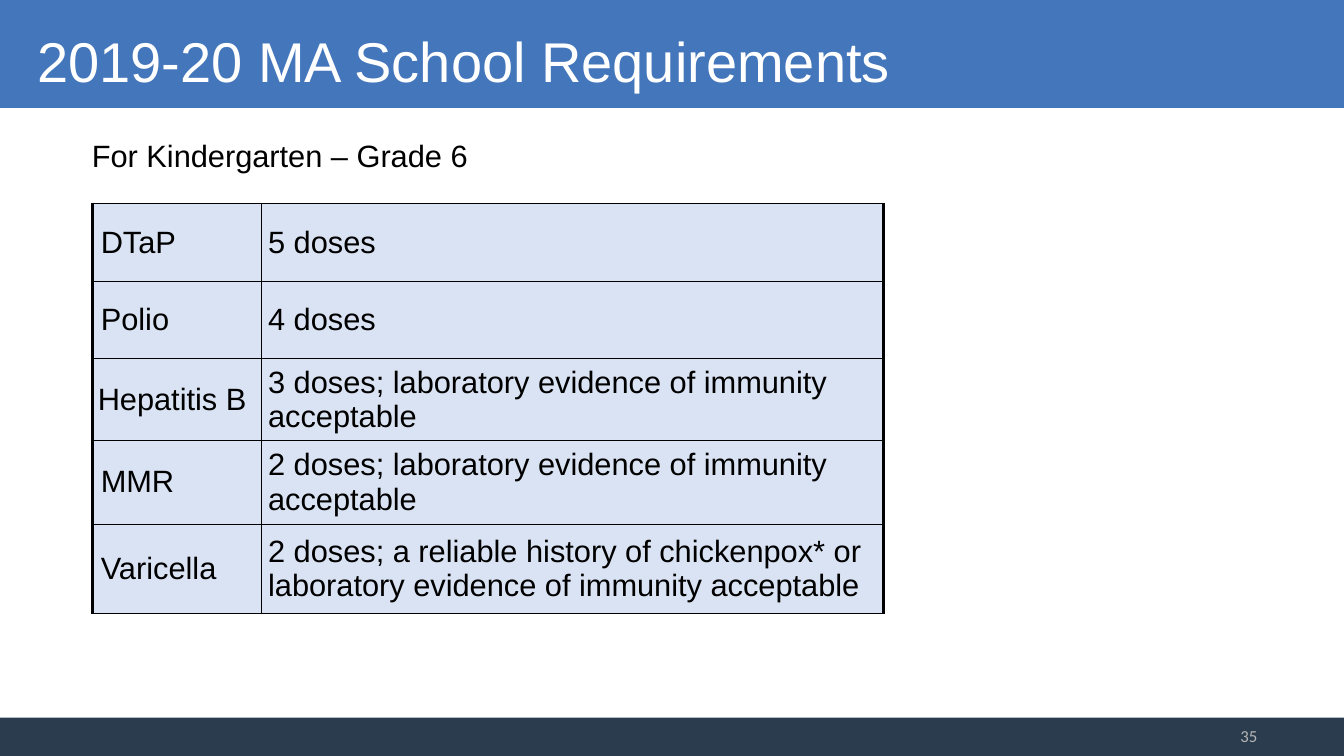
from dataclasses import dataclass

from lxml import etree
from pptx import Presentation
from pptx.dml.color import RGBColor
from pptx.enum.shapes import MSO_SHAPE
from pptx.enum.text import MSO_ANCHOR, MSO_AUTO_SIZE, PP_ALIGN
from pptx.oxml.ns import qn
from pptx.util import Inches, Pt

RECTANGLE = MSO_SHAPE.RECTANGLE
TOP, MIDDLE = MSO_ANCHOR.TOP, MSO_ANCHOR.MIDDLE
LEFT, RIGHT = PP_ALIGN.LEFT, PP_ALIGN.RIGHT
NO_AUTOFIT = MSO_AUTO_SIZE.NONE

SLIDE_WIDTH, SLIDE_HEIGHT = Inches(13.33), Inches(7.5)
COLORS = {
    "header": "4376BB",
    "footer": "2A3C4E",
    "number": "B5B5B5",
    "cell": "DAE3F3",
    "text": "000000",
    "title": "FFFFFF",
}
COLUMN_SHARES = (12.53, 46.29)
THIN, THICK = 1, 2.25


@dataclass(frozen=True)
class Area:
    """Position and size in percent of the slide."""
    left: float
    top: float
    width: float
    height: float

    def box(self) -> tuple[int, int, int, int]:
        return across(self.left), down(self.top), across(self.width), down(self.height)


@dataclass(frozen=True)
class Band:
    area: Area
    color: str


@dataclass(frozen=True)
class TextStyle:
    size: float
    color: str
    font: str = "Arial"
    align: PP_ALIGN = LEFT
    anchor: MSO_ANCHOR = TOP


@dataclass(frozen=True)
class Requirement:
    vaccine: str
    doses: str
    height: float
    indent: float = 0.08


BANDS = (
    Band(Area(0, 0, 100, 14.27), "header"),
    Band(Area(0, 94.93, 100, 5.07), "footer"),
)
REQUIREMENTS = (
    Requirement("DTaP", "5 doses", 10.27),
    Requirement("Polio", "4 doses", 10.27),
    Requirement("Hepatitis B", "3 doses; laboratory evidence of immunity acceptable", 10.8, 0.05),
    Requirement("MMR", "2 doses; laboratory evidence of immunity acceptable", 11.07),
    Requirement(
        "Varicella",
        "2 doses; a reliable history of chickenpox* or laboratory evidence of immunity acceptable",
        11.87,
    ),
)
TITLE_STYLE = TextStyle(40, "title")
BODY_STYLE = TextStyle(22, "text")
CELL_STYLE = TextStyle(22, "text", anchor=MIDDLE)
NUMBER_STYLE = TextStyle(12, "number", "Calibri", RIGHT, MIDDLE)


def across(percent: float) -> int:
    return round(SLIDE_WIDTH * percent / 100)


def down(percent: float) -> int:
    return round(SLIDE_HEIGHT * percent / 100)


def color(name: str) -> RGBColor:
    return RGBColor.from_string(COLORS[name])


def write_text(text_frame, text: str, style: TextStyle) -> None:
    text_frame.text = text
    text_frame.word_wrap = True
    for paragraph in text_frame.paragraphs:
        paragraph.alignment = style.align
        paragraph.space_before = Pt(0)
        for run in paragraph.runs:
            run.font.size = Pt(style.size)
            run.font.name = style.font
            run.font.color.rgb = color(style.color)


def fill_text_shape(shape, area: Area, text: str, style: TextStyle) -> None:
    shape.left, shape.top, shape.width, shape.height = area.box()
    write_text(shape.text_frame, text, style)
    shape.text_frame.auto_size = NO_AUTOFIT
    shape.text_frame.vertical_anchor = style.anchor


def remove_bullet(paragraph) -> None:
    properties = paragraph._p.get_or_add_pPr()
    properties.set("marL", "0")
    properties.set("indent", "0")
    etree.SubElement(properties, qn("a:buNone"))


def draw_band(slide, band: Band) -> None:
    shape = slide.shapes.add_shape(RECTANGLE, *band.area.box())
    shape.shadow.inherit = False
    shape.fill.solid()
    shape.fill.fore_color.rgb = color(band.color)
    shape.line.fill.background()
    slide.shapes.title.element.addprevious(shape.element)


def set_borders(cell, widths: dict[str, float]) -> None:
    properties = cell._tc.get_or_add_tcPr()
    for position, (side, width) in enumerate(widths.items()):
        line = etree.Element(qn(f"a:{side}"), w=str(Pt(width)))
        fill = etree.SubElement(line, qn("a:solidFill"))
        etree.SubElement(fill, qn("a:srgbClr"), val=COLORS["text"])
        properties.insert(position, line)


def draw_cell(cell, text: str, indent: float, left: float, right: float) -> None:
    write_text(cell.text_frame, text, CELL_STYLE)
    cell.vertical_anchor = CELL_STYLE.anchor
    cell.margin_left = Inches(indent)
    cell.margin_right = cell.margin_top = cell.margin_bottom = 0
    cell.fill.solid()
    cell.fill.fore_color.rgb = color("cell")
    set_borders(cell, {"lnL": left, "lnR": right, "lnT": THIN, "lnB": THIN})


def draw_requirements(slide) -> None:
    area = Area(6.9, 26.93, sum(COLUMN_SHARES), sum(row.height for row in REQUIREMENTS))
    table = slide.shapes.add_table(len(REQUIREMENTS), len(COLUMN_SHARES), *area.box()).table
    table.first_row = table.horz_banding = False
    for column, share in zip(table.columns, COLUMN_SHARES):
        column.width = across(share)
    for index, requirement in enumerate(REQUIREMENTS):
        table.rows[index].height = down(requirement.height)
        draw_cell(table.cell(index, 0), requirement.vaccine, requirement.indent, THICK, THIN)
        draw_cell(table.cell(index, 1), requirement.doses, 0.07, THIN, THICK)


def main() -> None:
    presentation = Presentation()
    presentation.slide_width, presentation.slide_height = SLIDE_WIDTH, SLIDE_HEIGHT
    slide = presentation.slides.add_slide(presentation.slide_layouts[1])
    for band in BANDS:
        draw_band(slide, band)
    title_area = Area(2.03, 2.8, 92.27, 10.27)
    fill_text_shape(slide.shapes.title, title_area, "2019-20 MA School Requirements", TITLE_STYLE)
    grades = slide.placeholders[1]
    fill_text_shape(grades, Area(6.08, 17.47, 58.74, 6.27), "For Kindergarten – Grade 6", BODY_STYLE)
    remove_bullet(grades.text_frame.paragraphs[0])
    draw_requirements(slide)
    number_area = Area(71.87, 94.67, 22.43, 5.33)
    number = slide.shapes.add_textbox(*number_area.box())
    fill_text_shape(number, number_area, "35", NUMBER_STYLE)
    presentation.save("out.pptx")


if __name__ == "__main__":
    main()
